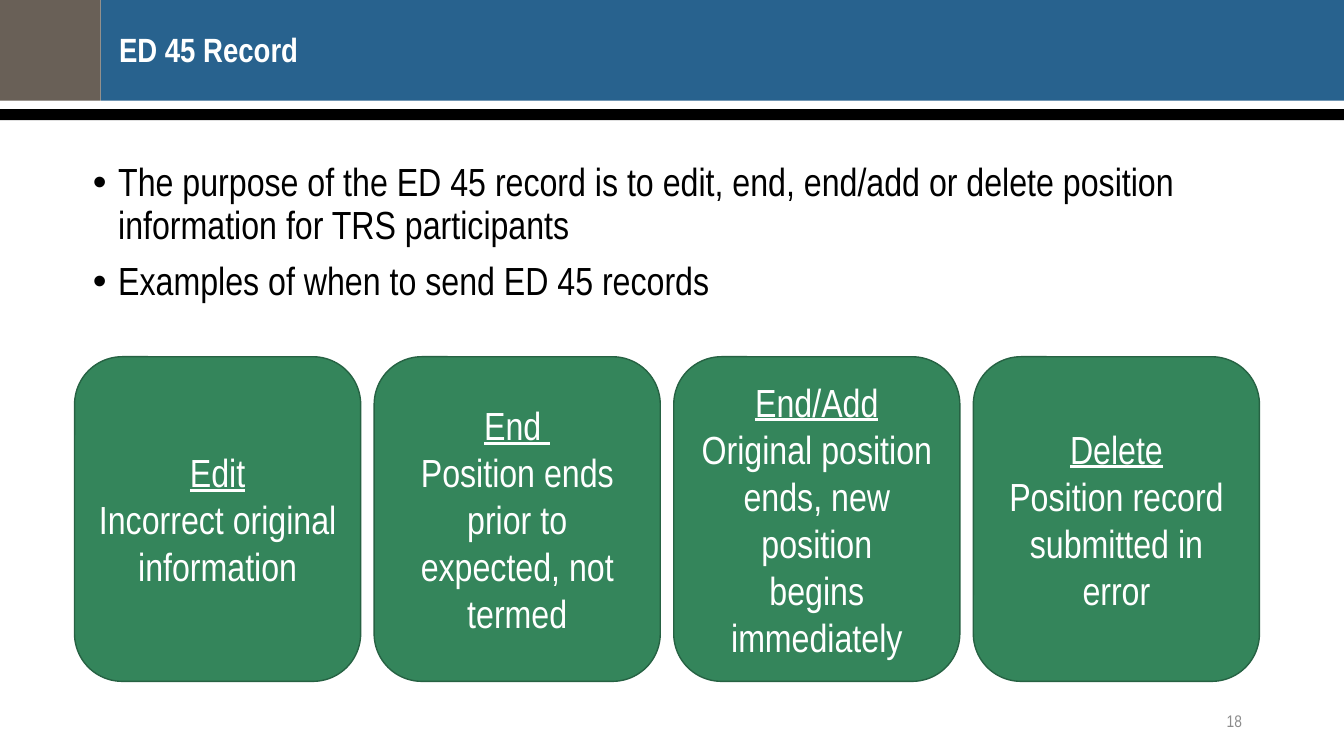
from dataclasses import dataclass

from lxml import etree
from pptx import Presentation
from pptx import util as u
from pptx.dml.color import RGBColor
from pptx.enum import shapes, text
from pptx.oxml.ns import qn

FONT = "Arial Narrow"
COLORS = {
    "blue": "28628E",
    "taupe": "696057",
    "black": "000000",
    "white": "FFFFFF",
    "gray": "8C8C8C",
    "green": "34855B",
    "dark_green": "266243",
}
CARD_LEFT, CARD_TOP, CARD_PITCH = 1.88, 8.99, 7.55
CARD_WIDTH, CARD_HEIGHT = 7.21, 8.18
NO_INSETS = {"margin_left": 0, "margin_top": 0, "margin_right": 0, "margin_bottom": 0}


@dataclass(frozen=True)
class Band:
    left: float
    top: float
    width: float
    height: float
    color: str


@dataclass(frozen=True)
class Card:
    action: str
    reasons: tuple[str, ...]


BANDS = (
    Band(2.54, 0, 31.33, 2.54, "blue"),
    Band(0, 0, 2.54, 2.54, "taupe"),
    Band(0, 2.75, 33.87, 0.28, "black"),
)
PURPOSE = (
    "The purpose of the ED 45 record is to edit, end, end/add or delete position "
    "information for TRS participants",
    "Examples of when to send ED 45 records",
)
CARDS = (
    Card("Edit", ("Incorrect original information",)),
    Card("End ", ("Position ends prior to expected, not termed",)),
    Card("End/Add", ("Original position ends, new position", "begins immediately")),
    Card("Delete", ("Position record submitted in error",)),
)


def rgb(color: str) -> RGBColor:
    return RGBColor.from_string(COLORS[color])


def apply(target, values: dict) -> None:
    for attribute, value in values.items():
        setattr(target, attribute, value)


def place(left: float, top: float, width: float, height: float) -> tuple:
    return u.Cm(left), u.Cm(top), u.Cm(width), u.Cm(height)


def style_font(font, size: float, color: str, **values) -> None:
    apply(font, {"name": FONT, "size": u.Pt(size), **values})
    font.color.rgb = rgb(color)


def draw_band(slide, band: Band) -> None:
    bar = slide.shapes.add_shape(
        shapes.MSO_SHAPE.RECTANGLE, *place(band.left, band.top, band.width, band.height)
    )
    bar.shadow.inherit = False
    bar.fill.solid()
    bar.fill.fore_color.rgb = rgb(band.color)
    bar.line.fill.background()


def draw_title(slide) -> None:
    title = slide.shapes.title
    slide.shapes.element.append(title.element)
    bounds = place(3, 0.84, 28.52, 1.42)
    apply(title, dict(zip(("left", "top", "width", "height"), bounds)))
    apply(title.text_frame, {
        **NO_INSETS,
        "text": "ED 45 Record",
        "vertical_anchor": text.MSO_ANCHOR.TOP,
        "auto_size": text.MSO_AUTO_SIZE.NONE,
        "word_wrap": True,
    })
    heading = title.text_frame.paragraphs[0]
    apply(heading, {"alignment": text.PP_ALIGN.LEFT, "line_spacing": 0.9})
    style_font(heading.runs[0].font, 24, "white", bold=True)


def draw_purpose(slide) -> None:
    frame = slide.shapes.add_textbox(*place(2.34, 4.11, 29.21, 4.37)).text_frame
    apply(frame, {**NO_INSETS, "word_wrap": True})
    for index, statement in enumerate(PURPOSE):
        bullet = frame.add_paragraph() if index else frame.paragraphs[0]
        properties = bullet._p.get_or_add_pPr()
        properties.set("marL", str(u.Cm(0.64)))
        properties.set("indent", str(u.Cm(-0.64)))
        etree.SubElement(properties, qn("a:buFont")).set("typeface", "Arial")
        etree.SubElement(properties, qn("a:buChar")).set("char", "•")
        apply(bullet, {"line_spacing": 0.9, "space_before": u.Pt(10 if index else 0)})
        run = bullet.add_run()
        run.text = statement
        style_font(run.font, 28, "black")


def draw_page_number(slide) -> None:
    frame = slide.shapes.add_textbox(*place(23.93, 17.65, 7.62, 1.02)).text_frame
    apply(frame, {"text": "18", "word_wrap": True,
                  "vertical_anchor": text.MSO_ANCHOR.MIDDLE})
    number = frame.paragraphs[0]
    number.alignment = text.PP_ALIGN.RIGHT
    style_font(number.runs[0].font, 12, "gray")


def draw_card(slide, card: Card, left: float) -> None:
    box = slide.shapes.add_shape(
        shapes.MSO_SHAPE.ROUNDED_RECTANGLE, *place(left, CARD_TOP, CARD_WIDTH, CARD_HEIGHT)
    )
    box.shadow.inherit = False
    box.fill.solid()
    box.fill.fore_color.rgb = rgb("green")
    box.line.color.rgb = rgb("dark_green")
    box.line.width = u.Pt(1)
    frame = box.text_frame
    apply(frame, {"text": "\n".join((card.action, *card.reasons)), "word_wrap": True,
                  "vertical_anchor": text.MSO_ANCHOR.MIDDLE})
    for index, line in enumerate(frame.paragraphs):
        line.alignment = text.PP_ALIGN.CENTER
        style_font(line.runs[0].font, 28, "white", underline=index == 0)


def main() -> None:
    deck = Presentation()
    apply(deck, {"slide_width": u.Cm(33.87), "slide_height": u.Cm(19.05)})
    slide = deck.slides.add_slide(deck.slide_layouts.get_by_name("Title Only"))
    for band in BANDS:
        draw_band(slide, band)
    draw_title(slide)
    draw_purpose(slide)
    draw_page_number(slide)
    for index, card in enumerate(CARDS):
        draw_card(slide, card, CARD_LEFT + index * CARD_PITCH)
    deck.save("out.pptx")


if __name__ == "__main__":
    main()
